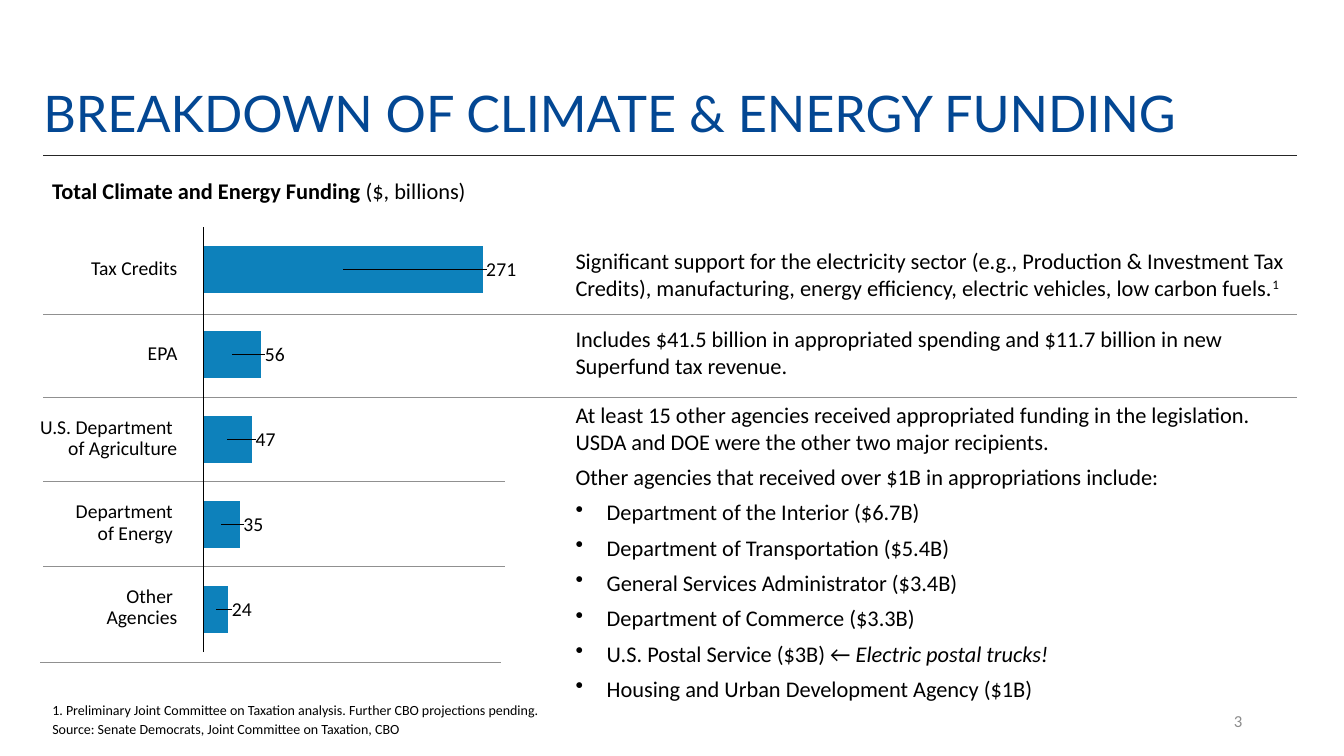
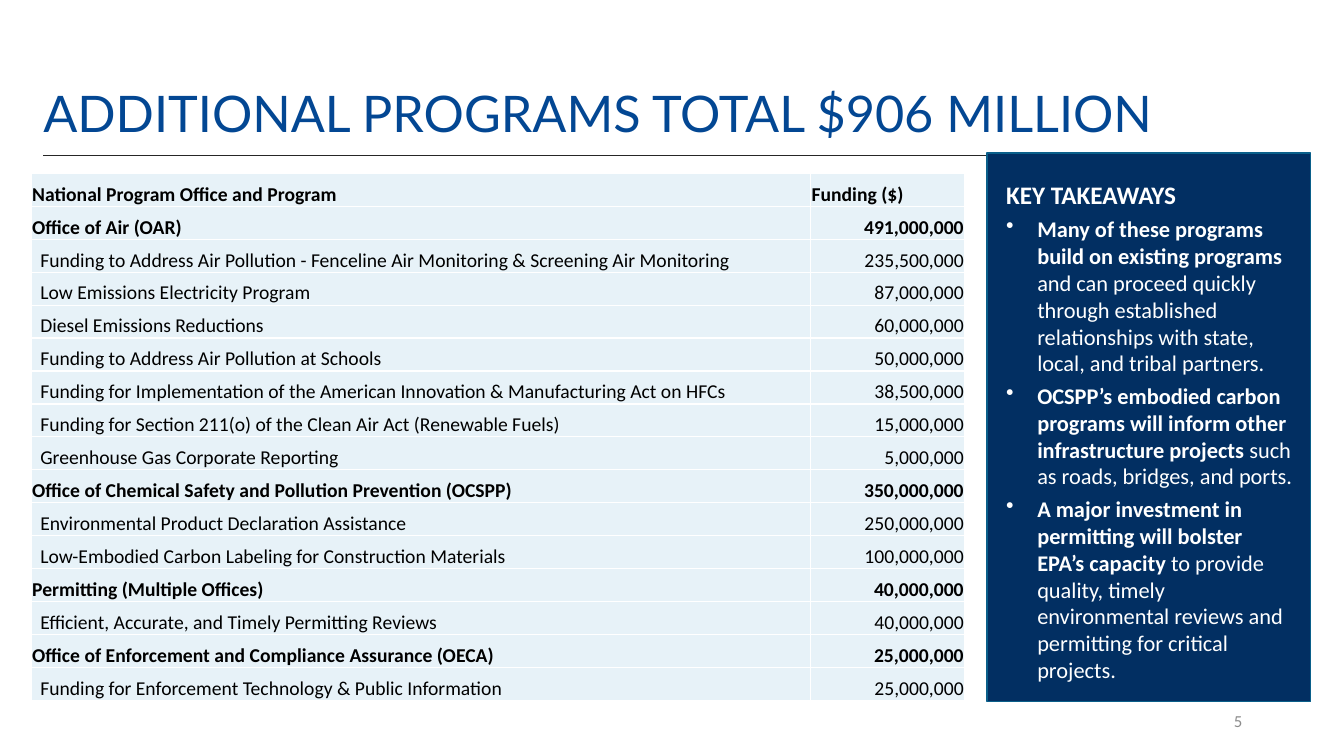
"""Build two slides on climate and energy funding."""
from lxml.etree import SubElement
from pptx import Presentation
from pptx.chart.data import CategoryChartData
from pptx.dml.color import RGBColor
from pptx.enum.chart import XL_CHART_TYPE as ChartType, XL_LABEL_POSITION as LabelPosition
from pptx.enum.chart import XL_TICK_LABEL_POSITION as TickLabels, XL_TICK_MARK as TickMark
from pptx.enum.shapes import MSO_CONNECTOR as Connector, MSO_SHAPE as Shape
from pptx.enum.text import MSO_ANCHOR as Anchor, MSO_AUTO_SIZE as AutoSize, PP_ALIGN as Align
from pptx.oxml import parse_xml
from pptx.oxml.ns import nsdecls, qn
from pptx.util import Inches, Pt

BODY_FONT, TITLE_FONT = "Calibri", "Lato"
BLACK, WHITE, TITLE_BLUE = "000000", "FFFFFF", "034793"
RULE_DARK, RULE_GREY, NUMBER_GREY = "262626", "909090", "8C8C8C"
BAR_BLUE, CELL_BLUE, PANEL_BLUE, PANEL_EDGE = "0D81BB", "E7F2F8", "022F62", "0A5F8A"
LEFT, RIGHT = 0.43, 12.86

RECIPIENTS = [
    (["Tax Credits"], 271),
    (["EPA"], 56),
    (["U.S. Department ", "of Agriculture"], 47),
    (["Department ", "of Energy "], 35),
    (["Other ", "Agencies"], 24),
]
SEPARATORS = [(LEFT, 3.12, RIGHT), (LEFT, 3.94, RIGHT), (LEFT, 4.78, 5.01),
              (LEFT, 5.62, 5.01), (0.4, 6.57, 4.97)]
AGENCIES = [
    [("Department of the Interior ($6.7B)", "")],
    [("Department of Transportation ($5.4B)", "")],
    [("General Services Administrator ($3.4B)", "")],
    [("Department of Commerce ($3.3B)", "")],
    [("U.S. Postal Service ($3B) ← ", ""), ("Electric postal trucks!", "italic")],
    [("Housing and Urban Development Agency ($1B)", "")],
]
OFFICES = [
    ("Office of Air (OAR)", "491,000,000", [
        ("Funding to Address Air Pollution - Fenceline Air Monitoring & Screening Air Monitoring",
         "235,500,000"),
        ("Low Emissions Electricity Program", "87,000,000"),
        ("Diesel Emissions Reductions", "60,000,000"),
        ("Funding to Address Air Pollution at Schools", "50,000,000"),
        ("Funding for Implementation of the American Innovation & Manufacturing Act on HFCs",
         "38,500,000"),
        ("Funding for Section 211(o) of the Clean Air Act (Renewable Fuels)", "15,000,000"),
        ("Greenhouse Gas Corporate Reporting", "5,000,000"),
    ]),
    ("Office of Chemical Safety and Pollution Prevention (OCSPP)", "350,000,000", [
        ("Environmental Product Declaration Assistance", "250,000,000"),
        ("Low-Embodied Carbon Labeling for Construction Materials", "100,000,000"),
    ]),
    ("Permitting (Multiple Offices)", "40,000,000", [
        ("Efficient, Accurate, and Timely Permitting Reviews", "40,000,000"),
    ]),
    ("Office of Enforcement and Compliance Assurance (OECA)", "25,000,000", [
        ("Funding for Enforcement Technology & Public Information", "25,000,000"),
    ]),
]
TAKEAWAYS = [
    ("Many of these programs build on existing programs ",
     "and can proceed quickly through established relationships with state, local, "
     "and tribal partners."),
    ("OCSPP’s embodied carbon programs will inform other infrastructure projects ",
     "such as roads, bridges, and ports."),
    ("A major investment in permitting will bolster EPA’s capacity ",
     "to provide quality, timely environmental reviews and permitting for critical projects."),
]


def rgb(color):
    """Turn a hex string into a colour."""
    return RGBColor.from_string(color)


def style_font(font, size, color=BLACK, name=BODY_FONT, bold=False):
    """Set the face, size, colour and weight of a font."""
    font.name, font.size, font.bold = name, Pt(size), bold
    font.color.rgb = rgb(color)


def add_run(paragraph, text, size, style="", color=BLACK, name=BODY_FONT):
    """Add one run in a plain, bold, italic or superscript style."""
    run = paragraph.add_run()
    run.text = text
    style_font(run.font, size, color, name, style == "bold")
    if style == "italic":
        run.font.italic = True
    if style == "superscript":
        run._r.get_or_add_rPr().set("baseline", "30000")


def add_bullet(paragraph):
    """Give a paragraph a hanging round bullet."""
    properties = paragraph._p.get_or_add_pPr()
    properties.set("marL", str(Inches(0.31)))
    properties.set("indent", str(-Inches(0.31)))
    SubElement(properties, qn("a:buChar"), char="•")


def add_paragraph(frame, runs, size, color=BLACK, bullet=False, align=Align.LEFT,
                  spacing=1.0, before=0, after=0):
    """Add a paragraph of styled runs, using the empty first one if free."""
    first = frame.paragraphs[0]
    paragraph = frame.add_paragraph() if first.runs else first
    if bullet:
        add_bullet(paragraph)
    paragraph.alignment, paragraph.line_spacing = align, spacing
    paragraph.space_before, paragraph.space_after = Pt(before), Pt(after)
    for text, style in runs:
        add_run(paragraph, text, size, style, color)


def add_text_box(slide, left, top, width, height, anchor=Anchor.TOP, inset=True):
    """Add a wrapping text box and return its text frame."""
    frame = slide.shapes.add_textbox(
        Inches(left), Inches(top), Inches(width), Inches(height)).text_frame
    frame.word_wrap, frame.vertical_anchor = True, anchor
    if not inset:
        frame.margin_left = frame.margin_right = frame.margin_top = frame.margin_bottom = 0
    return frame


def add_rule(slide, left, y, right, color, weight):
    """Draw a horizontal line."""
    line = slide.shapes.add_connector(
        Connector.STRAIGHT, Inches(left), Inches(y), Inches(right), Inches(y))
    line.line.color.rgb, line.line.width = rgb(color), Pt(weight)
    SubElement(line._element.spPr, qn("a:effectLst"))


def add_titled_slide(presentation, title, number):
    """Add a slide with the shared title, rule and slide number."""
    slide = presentation.slides.add_slide(presentation.slide_layouts[5])
    shape = slide.shapes.title
    shape.left, shape.top = Inches(LEFT), Inches(0.37)
    shape.width, shape.height = Inches(RIGHT - LEFT), Inches(1.1)
    frame = shape.text_frame
    frame.auto_size, frame.word_wrap = AutoSize.NONE, True
    frame.vertical_anchor = Anchor.BOTTOM
    frame.margin_left = frame.margin_right = 0
    paragraph = frame.paragraphs[0]
    paragraph.alignment, paragraph.line_spacing = Align.LEFT, 0.9
    add_run(paragraph, title, 36, color=TITLE_BLUE, name=TITLE_FONT)
    add_rule(slide, LEFT, 1.54, RIGHT, RULE_DARK, 1)
    number_frame = add_text_box(slide, 9.42, 6.95, 3, 0.4, Anchor.MIDDLE)
    add_paragraph(number_frame, [(number, "")], 12, NUMBER_GREY, align=Align.RIGHT)
    return slide


def manual_layout(modes="", **places):
    """Build a chart layout element from fractions of the chart area."""
    values = "".join(f'<c:{key} val="{value:.3f}"/>' for key, value in places.items())
    return parse_xml(f'<c:layout {nsdecls("c")}><c:manualLayout>{modes}{values}'
                     '</c:manualLayout></c:layout>')


def place_plot(chart, x, y, w, h):
    """Fix the inner plot area within the chart."""
    modes = '<c:layoutTarget val="inner"/><c:xMode val="edge"/><c:yMode val="edge"/>'
    area = chart._chartSpace.chart.plotArea
    for layout in area.findall(qn("c:layout")):
        area.remove(layout)
    area.insert(0, manual_layout(modes, x=x, y=y, w=w, h=h))


def label_bars(series, values, plot_width):
    """Put each value label just past the end of its bar."""
    for index, value in enumerate(values):
        label = series.points[index].data_label
        style_font(label.font, 14)
        label.position = LabelPosition.CENTER
        half_bar = value / max(values) * plot_width / 2
        half_label = 0.014 * (1 + len(str(value)))
        element = series._element.find(qn("c:dLbls")).findall(qn("c:dLbl"))[index]
        element.insert(1, manual_layout(x=half_bar + half_label, y=0))


def add_funding_chart(slide):
    """Add the bar chart of funding by recipient."""
    values = [value for _, value in RECIPIENTS]
    data = CategoryChartData()
    data.categories = [str(index + 1) for index in range(len(values))]
    data.add_series("Series 1", values)
    chart = slide.shapes.add_chart(ChartType.BAR_STACKED, Inches(1.94), Inches(2.16),
                                   Inches(3.21), Inches(4.4), data).chart
    chart.has_legend = chart.has_title = False
    style_font(chart.font, 10)
    plot_width = 0.864
    place_plot(chart, 0.025, 0.021, plot_width, 0.959)
    plot = chart.plots[0]
    plot.gap_width, plot.overlap, plot.vary_by_categories = 80, 100, False
    categories, scale = chart.category_axis, chart.value_axis
    categories.reverse_order = True
    categories.tick_label_position = TickLabels.NONE
    categories.major_tick_mark = categories.minor_tick_mark = TickMark.NONE
    categories.format.line.color.rgb = rgb(BLACK)
    categories.format.line.width = Pt(0.75)
    scale.minimum_scale, scale.maximum_scale = 0, max(values)
    scale.has_major_gridlines = scale.visible = False
    series = plot.series[0]
    series.format.fill.solid()
    series.format.fill.fore_color.rgb = rgb(BAR_BLUE)
    label_bars(series, values, plot_width)


def add_recipient_names(slide):
    """Name each bar to the left of the chart."""
    height = 0.42
    for index, (lines, _) in enumerate(RECIPIENTS):
        middle = 2.67 + 0.84 * index
        frame = add_text_box(slide, 0.26, middle - height / 2, 1.5, height,
                             Anchor.MIDDLE, inset=False)
        for line in lines:
            add_paragraph(frame, [(line, "")], 14, align=Align.RIGHT, spacing=0.9)


def add_commentary(slide, top, height, paragraphs, bullets=()):
    """Add explanatory text to the right of the chart."""
    frame = add_text_box(slide, 5.61, top, 7.26, height)
    for runs in paragraphs:
        add_paragraph(frame, runs, 16, after=6)
    for runs in bullets:
        add_paragraph(frame, runs, 16, bullet=True, after=6)


def build_breakdown(presentation):
    """Build the slide that breaks the funding down by recipient."""
    slide = add_titled_slide(presentation, "BREAKDOWN OF CLIMATE & ENERGY FUNDING", "3")
    for left, y, right in SEPARATORS:
        add_rule(slide, left, y, right, RULE_GREY, 0.5)
    heading = add_text_box(slide, 0.42, 1.74, 7.14, 0.34)
    add_paragraph(heading, [("Total Climate and Energy Funding", "bold"),
                            (" ($, billions)", "")], 16, spacing=0.9)
    notes = add_text_box(slide, 0.42, 6.93, 5.18, 0.26)
    add_paragraph(notes, [("1. Preliminary Joint Committee on Taxation analysis. "
                           "Further CBO projections pending.", "")], 10, spacing=0.9)
    add_paragraph(notes, [("Source: Senate Democrats, Joint Committee on Taxation, CBO", "")],
                  10, spacing=0.9, before=3)
    add_commentary(slide, 2.4, 0.64, [[
        ("Significant support for the electricity sector (e.g., Production & Investment Tax "
         "Credits), manufacturing, energy efficiency, electric vehicles, low carbon fuels.", ""),
        ("1", "superscript")]])
    add_commentary(slide, 3.18, 0.64, [[
        ("Includes $41.5 billion in appropriated spending and $11.7 billion in new "
         "Superfund tax revenue.", "")]])
    add_commentary(slide, 3.93, 3.11, [
        [("At least 15 other agencies received appropriated funding in the legislation. "
          "USDA and DOE were the other two major recipients.", "")],
        [("Other agencies that received over $1B in appropriations include:", "")],
    ], AGENCIES)
    add_funding_chart(slide)
    add_recipient_names(slide)


def fill_cell(cell, text, bold, indent=0.01, align=Align.LEFT):
    """Write and format one table cell with white borders."""
    cell.margin_left, cell.margin_right = Inches(indent), Inches(0.01)
    cell.margin_top, cell.margin_bottom = Inches(0.01), 0
    cell.vertical_anchor = Anchor.BOTTOM
    cell.fill.solid()
    cell.fill.fore_color.rgb = rgb(CELL_BLUE)
    add_paragraph(cell.text_frame, [(text, "bold" if bold else "")], 14, align=align)
    properties = cell._tc.get_or_add_tcPr()
    for index, side in enumerate(("lnL", "lnR", "lnT", "lnB")):
        properties.insert(index, parse_xml(
            f'<a:{side} {nsdecls("a")} w="{Pt(1)}"><a:solidFill>'
            f'<a:srgbClr val="{WHITE}"/></a:solidFill></a:{side}>'))


def add_program_table(slide):
    """Add the table of offices, programs and funding."""
    rows = [("National Program Office and Program", "Funding ($)", True)]
    for office, total, programs in OFFICES:
        rows.append((office, total, True))
        rows.extend((program, amount, False) for program, amount in programs)
    table = slide.shapes.add_table(len(rows), 2, Inches(0.31), Inches(1.72),
                                   Inches(9.26), Inches(5.23)).table
    table.first_row = table.horz_banding = False
    table.columns[0].width, table.columns[1].width = Inches(7.73), Inches(1.53)
    for index, (name, amount, bold) in enumerate(rows):
        fill_cell(table.cell(index, 0), name, bold, 0.01 if bold else 0.09)
        fill_cell(table.cell(index, 1), amount, bold, align=Align.RIGHT if index else Align.LEFT)


def add_takeaways(slide):
    """Add the dark panel of key takeaways."""
    panel = slide.shapes.add_shape(Shape.RECTANGLE, Inches(9.79), Inches(1.52),
                                   Inches(3.21), Inches(5.44))
    panel.shadow.inherit = False
    panel.fill.solid()
    panel.fill.fore_color.rgb = rgb(PANEL_BLUE)
    panel.line.color.rgb, panel.line.width = rgb(PANEL_EDGE), Pt(1)
    frame = add_text_box(slide, 9.88, 1.73, 3.06, 5.15)
    add_paragraph(frame, [("KEY TAKEAWAYS", "bold")], 18, WHITE, after=4)
    for point, detail in TAKEAWAYS:
        add_paragraph(frame, [(point, "bold"), (detail, "")], 16, WHITE, bullet=True, after=4)


def main():
    """Build and save the presentation."""
    presentation = Presentation()
    presentation.slide_width, presentation.slide_height = Inches(13.33), Inches(7.5)
    build_breakdown(presentation)
    slide = add_titled_slide(presentation, "ADDITIONAL PROGRAMS TOTAL $906 MILLION", "5")
    add_program_table(slide)
    add_takeaways(slide)
    presentation.save("out.pptx")


if __name__ == "__main__":
    main()
